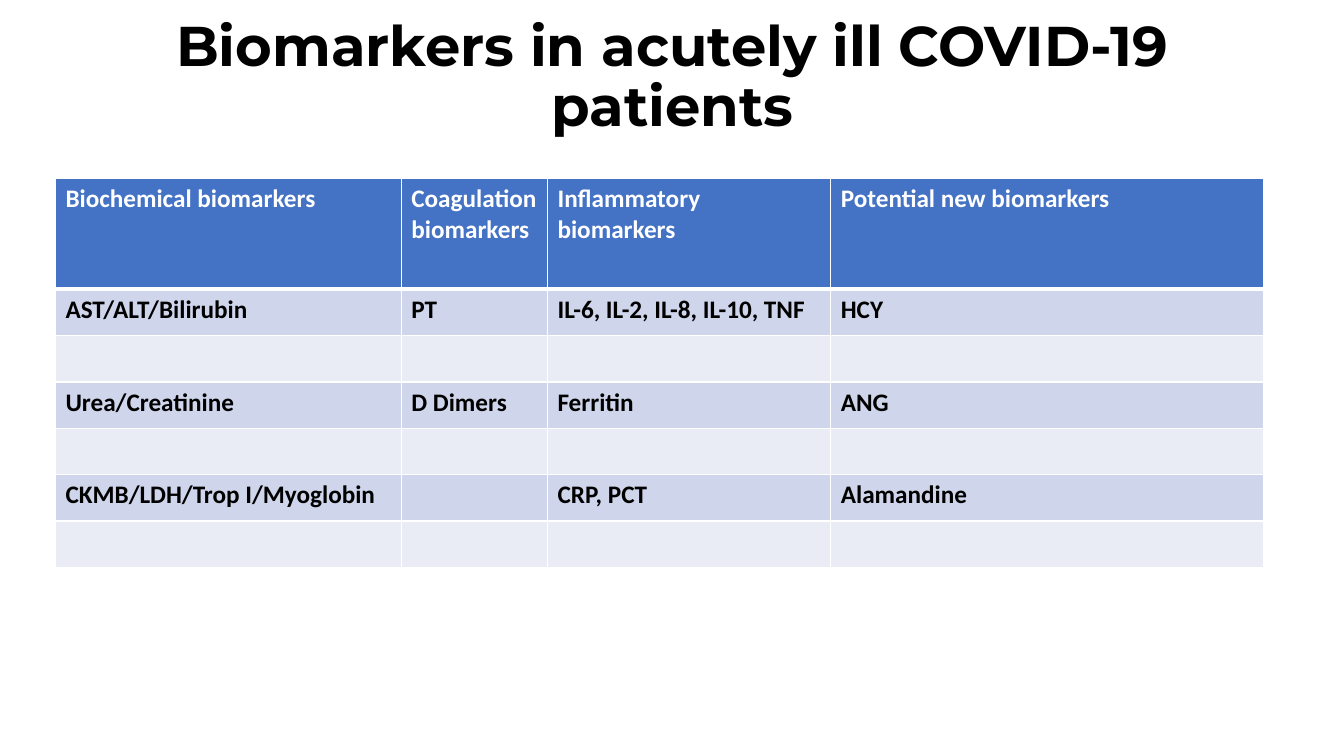
import pptx
import pptx.dml.color
import pptx.enum.text
import pptx.oxml.ns
import pptx.util
from lxml import etree

Inches = pptx.util.Inches
Pt = pptx.util.Pt
RGBColor = pptx.dml.color.RGBColor

BLACK = RGBColor(0x00, 0x00, 0x00)
WHITE = RGBColor(0xFF, 0xFF, 0xFF)
HEADER_BLUE = RGBColor(0x44, 0x72, 0xC4)
BAND_DARK = RGBColor(0xCF, 0xD5, 0xEA)
BAND_LIGHT = RGBColor(0xE9, 0xEB, 0xF5)

TITLE_FONT = {"name": "Montserrat", "size": Pt(40), "bold": True}
CELL_FONT = {"name": "Calibri", "size": Pt(18), "bold": True}

COLUMN_WIDTHS = [3.43, 1.45, 2.81, 4.29]
HEADER_HEIGHT = 1.1
BIOMARKERS = [
    ["Biochemical biomarkers", "Coagulation biomarkers",
     "Inflammatory biomarkers", "Potential new biomarkers"],
    ["AST/ALT/Bilirubin", "PT", "IL-6, IL-2, IL-8, IL-10, TNF", "HCY"],
    [""] * 4,
    ["Urea/Creatinine", "D Dimers", "Ferritin", "ANG"],
    [""] * 4,
    ["CKMB/LDH/Trop I/Myoglobin", "", "CRP, PCT", "Alamandine"],
    [""] * 4,
]


def format_font(font, values, color):
    for attribute, value in values.items():
        setattr(font, attribute, value)
    font.color.rgb = color


def set_borders(cell, widths):
    """Give the cell white borders; widths maps each side to points."""
    properties = cell._tc.get_or_add_tcPr()
    qn = pptx.oxml.ns.qn
    for position, (side, width) in enumerate(widths.items()):
        line = etree.Element(qn("a:ln" + side), w=str(Pt(width)))
        fill = etree.SubElement(line, qn("a:solidFill"))
        etree.SubElement(fill, qn("a:srgbClr"), val=str(WHITE))
        properties.insert(position, line)


def add_title(slide, left, top, width, height):
    title = slide.shapes.add_textbox(
        Inches(left), Inches(top), Inches(width), Inches(height))
    frame = title.text_frame
    frame.word_wrap = True
    frame.vertical_anchor = pptx.enum.text.MSO_ANCHOR.MIDDLE
    heading = frame.paragraphs[0]
    heading.alignment = pptx.enum.text.PP_ALIGN.CENTER
    heading.line_spacing = 0.9
    heading_run = heading.add_run()
    heading_run.text = "Biomarkers in acutely ill COVID-19 patients"
    format_font(heading_run.font, TITLE_FONT, BLACK)


def add_biomarker_table(slide, left, top, width, height):
    table = slide.shapes.add_table(
        len(BIOMARKERS), len(COLUMN_WIDTHS),
        Inches(left), Inches(top), Inches(width), Inches(height)).table

    # Column widths and row heights
    for column, column_width in zip(table.columns, COLUMN_WIDTHS):
        column.width = Inches(column_width)
    body_height = (height - HEADER_HEIGHT) / (len(BIOMARKERS) - 1)
    for number, row in enumerate(table.rows):
        row.height = Inches(body_height if number else HEADER_HEIGHT)

    # Cells: header, then alternating bands
    for number, texts in enumerate(BIOMARKERS):
        if number == 0:
            background, color = HEADER_BLUE, WHITE
        else:
            background = BAND_DARK if number % 2 else BAND_LIGHT
            color = BLACK
        borders = {"L": 1, "R": 1, "T": 3 if number == 1 else 1,
                   "B": 3 if number == 0 else 1}
        for index, text in enumerate(texts):
            cell = table.cell(number, index)
            cell.fill.solid()
            cell.fill.fore_color.rgb = background
            set_borders(cell, borders)
            if text:
                marker = cell.text_frame.paragraphs[0].add_run()
                marker.text = text
                format_font(marker.font, CELL_FONT, color)


def main():
    presentation = pptx.Presentation()
    presentation.slide_width = Inches(13.33)
    presentation.slide_height = Inches(7.5)
    slide = presentation.slides.add_slide(presentation.slide_layouts[6])
    add_title(slide, 0.92, 0.05, 11.5, 1.45)
    add_biomarker_table(slide, 0.55, 1.77, sum(COLUMN_WIDTHS), 3.86)
    presentation.save("out.pptx")


if __name__ == "__main__":
    main()
